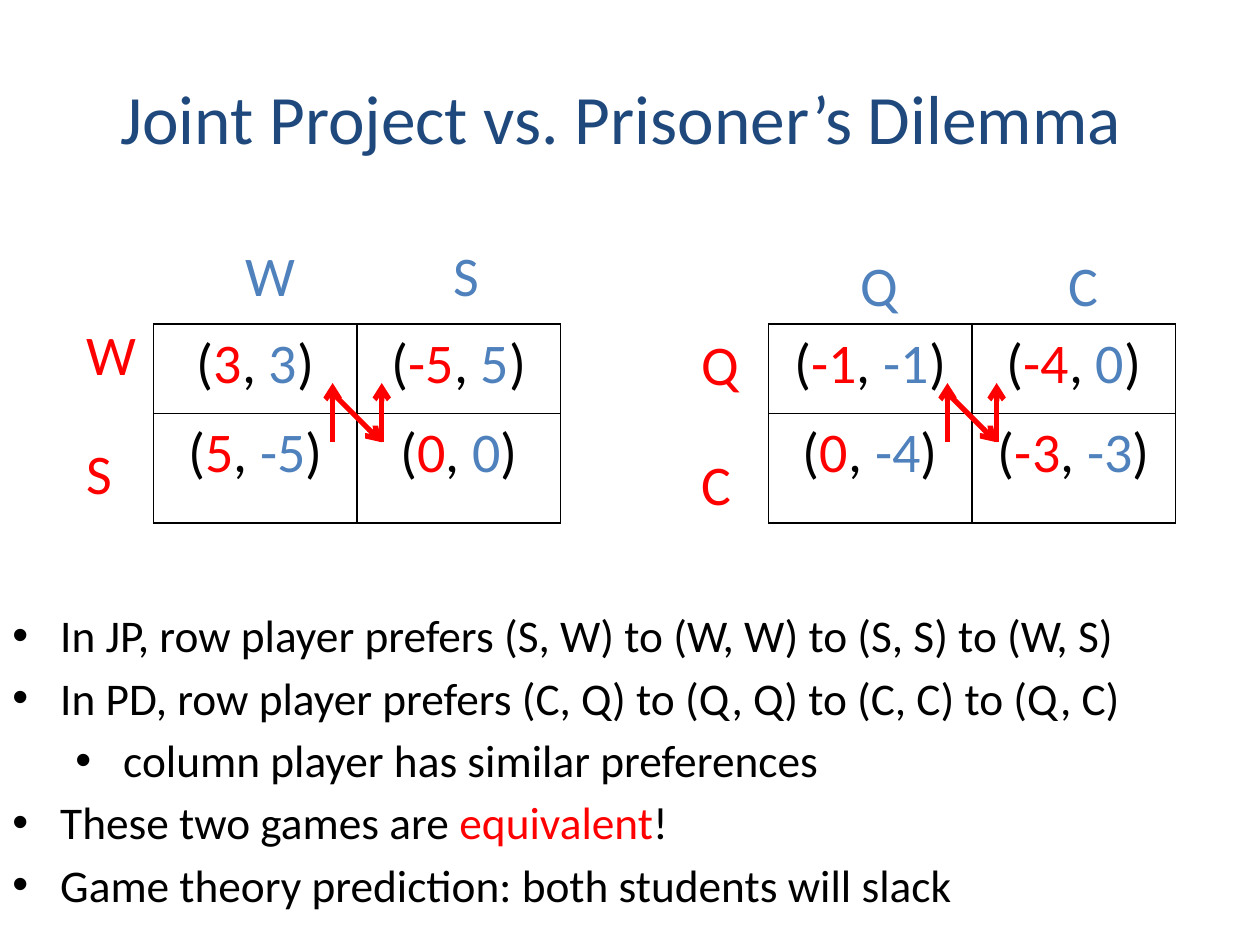
from dataclasses import dataclass
from typing import NamedTuple

from lxml.etree import SubElement
from pptx import Presentation
from pptx.dml.color import RGBColor
from pptx.enum.shapes import MSO_CONNECTOR as Connector
from pptx.enum.text import MSO_ANCHOR as Anchor, PP_ALIGN as Align
from pptx.oxml.ns import qn
from pptx.util import Inches, Pt


@dataclass(frozen=True)
class Theme:
    font: str = "Calibri"
    title: str = "1F497D"
    row_player: str = "FF0000"
    column_player: str = "4F81BD"
    ink: str = "000000"
    title_size: float = 39.6
    game_size: float = 32
    bullet_size: float = 25.9
    bullet_gap: float = 4.6
    border: float = 1
    arrow: float = 3


class Span(NamedTuple):
    text: str
    color: str


class Area(NamedTuple):
    column: float
    row: float
    columns: float
    rows: float


class Bullet(NamedTuple):
    spans: list[Span]
    level: int = 0


@dataclass(frozen=True)
class Game:
    column: float
    label_drop: float
    moves: tuple[str, str]
    payoffs: list[list[tuple[str, str]]]


THEME = Theme()
GRID_COLUMNS, GRID_ROWS = 100, 75
TABLE_TOP, CELL_WIDTH, ROW_HEIGHTS = 25.7, 16.15, (7.1, 8.7)
COLUMN_LABELS, ROW_LABELS = (6.3, 22.85), (24.9, 34.35)
ARROWS = [((14.2, 35.1), (14.2, 30.4)),
          ((18.1, 35.1), (18.1, 30.4)),
          ((14.2, 31.2), (18.1, 35.1))]

GAMES = [
    Game(12.2, 0, ("W", "S"),
         [[("3", "3"), ("-5", "5")], [("5", "-5"), ("0", "0")]]),
    Game(61, 0.8, ("Q", "C"),
         [[("-1", "-1"), ("-4", "0")], [("0", "-4"), ("-3", "-3")]]),
]

BULLETS = [
    Bullet([Span("In JP, row player prefers (S, W) to (W, W) to (S, S) to (W, S)", THEME.ink)]),
    Bullet([Span("In PD, row player prefers (C, Q) to (Q, Q) to (C, C) to (Q, C)", THEME.ink)]),
    Bullet([Span("column player has similar preferences", THEME.ink)], level=1),
    Bullet([Span("These two games are ", THEME.ink),
            Span("equivalent", THEME.row_player),
            Span("!", THEME.ink)]),
    Bullet([Span("Game theory prediction: both students will slack", THEME.ink)]),
]

deck = Presentation()
deck.slide_width, deck.slide_height = Inches(10), Inches(7.5)
page = deck.slides.add_slide(deck.slide_layouts[6])


def across(columns: float) -> int:
    return round(deck.slide_width * columns / GRID_COLUMNS)


def down(rows: float) -> int:
    return round(deck.slide_height * rows / GRID_ROWS)


def write(para, spans: list[Span], size: float) -> None:
    for span in spans:
        run = para.add_run()
        run.text = span.text
        run.font.name, run.font.size = THEME.font, Pt(size)
        run.font.color.rgb = RGBColor.from_string(span.color)


def add_box(area: Area):
    box = page.shapes.add_textbox(across(area.column), down(area.row),
                                  across(area.columns), down(area.rows))
    box.text_frame.word_wrap = True
    return box.text_frame


def add_title(text: str) -> None:
    frame = add_box(Area(5, 3, 90, 12.5))
    frame.vertical_anchor = Anchor.MIDDLE
    frame.margin_right = across(2.4)
    frame.paragraphs[0].alignment = Align.CENTER
    write(frame.paragraphs[0], [Span(text, THEME.title)], THEME.title_size)


def add_label(text: str, column: float, row: float, color: str) -> None:
    frame = add_box(Area(column, row, 6, 6.4))
    write(frame.paragraphs[0], [Span(text, color)], THEME.game_size)


def add_borders(cell) -> None:
    properties = cell._tc.get_or_add_tcPr()
    for position, side in enumerate(("lnL", "lnR", "lnT", "lnB")):
        line = properties.makeelement(qn(f"a:{side}"), {"w": str(Pt(THEME.border))})
        fill = SubElement(line, qn("a:solidFill"))
        SubElement(fill, qn("a:srgbClr"), val=THEME.ink)
        properties.insert(position, line)


def add_payoffs(game: Game) -> None:
    table = page.shapes.add_table(2, 2, across(game.column), down(TABLE_TOP),
                                  across(2 * CELL_WIDTH), down(sum(ROW_HEIGHTS))).table
    table.first_row = table.horz_banding = False
    for column in table.columns:
        column.width = across(CELL_WIDTH)
    for row, height, pairs in zip(table.rows, ROW_HEIGHTS, game.payoffs):
        row.height = down(height)
        for cell, (own, other) in zip(row.cells, pairs):
            cell.fill.background()
            add_borders(cell)
            para = cell.text_frame.paragraphs[0]
            para.alignment = Align.CENTER
            write(para, [Span("(", THEME.ink), Span(own, THEME.row_player),
                         Span(", ", THEME.ink), Span(other, THEME.column_player),
                         Span(")", THEME.ink)], THEME.game_size)


def add_arrow(column: float, start: tuple[float, float], end: tuple[float, float]) -> None:
    arrow = page.shapes.add_connector(
        Connector.STRAIGHT, across(column + start[0]), down(start[1]),
        across(column + end[0]), down(end[1]))
    arrow.line.color.rgb = RGBColor.from_string(THEME.row_player)
    arrow.line.width = Pt(THEME.arrow)
    SubElement(arrow.line._get_or_add_ln(), qn("a:tailEnd"), type="arrow")
    SubElement(arrow._element.spPr, qn("a:effectLst"))


def add_game(game: Game) -> None:
    add_payoffs(game)
    for move, offset, row in zip(game.moves, COLUMN_LABELS, ROW_LABELS):
        add_label(move, game.column + offset, 18.6 + game.label_drop, THEME.column_player)
        add_label(move, game.column - 6.3, row + game.label_drop, THEME.row_player)
    for start, end in ARROWS:
        add_arrow(game.column, start, end)


def add_bullets(bullets: list[Bullet]) -> None:
    frame = add_box(Area(0, 47.7, 100, 22.8))
    for index, bullet in enumerate(bullets):
        para = frame.add_paragraph() if index else frame.paragraphs[0]
        para.level = bullet.level
        para.space_before = Pt(THEME.bullet_gap)
        properties = para._p.get_or_add_pPr()
        properties.set("marL", str(across(3.8 + 5 * bullet.level)))
        properties.set("indent", str(-across(3.8)))
        SubElement(properties, qn("a:buFont"), typeface="Arial")
        SubElement(properties, qn("a:buChar"), char="•")
        write(para, bullet.spans, THEME.bullet_size)


add_title("Joint Project vs. Prisoner’s Dilemma")
for game in GAMES:
    add_game(game)
add_bullets(BULLETS)
deck.save("out.pptx")
